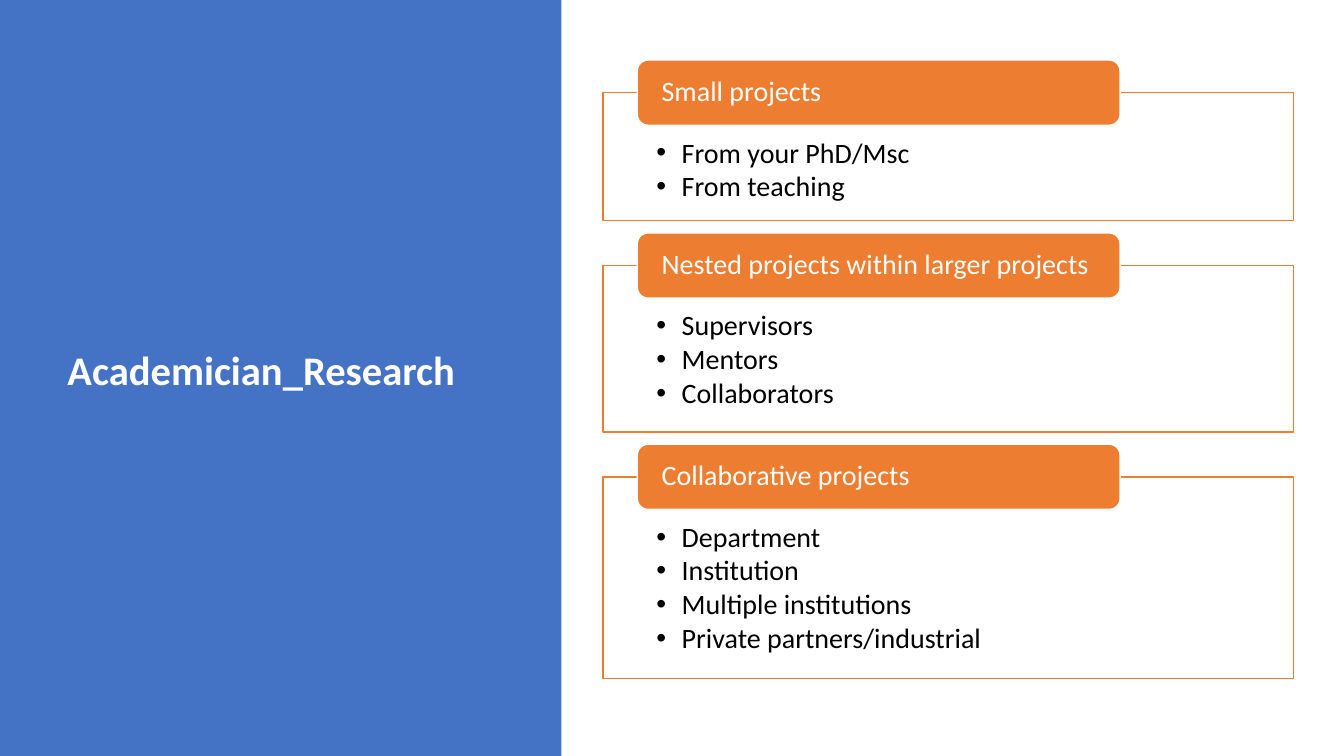
"""Build a slide with a title panel and three headed lists of research projects."""
from lxml.etree import SubElement
from pptx import Presentation
from pptx.dml.color import RGBColor
from pptx.enum.shapes import MSO_SHAPE
from pptx.enum.text import MSO_ANCHOR, MSO_AUTO_SIZE, PP_ALIGN
from pptx.oxml.ns import qn
from pptx.util import Pt

BLUE = RGBColor(0x44, 0x72, 0xC4)
ORANGE = RGBColor(0xED, 0x7D, 0x31)
WHITE = RGBColor(0xFF, 0xFF, 0xFF)
BLACK = RGBColor(0x00, 0x00, 0x00)

PROJECTS = [
    ("Small projects", 91.4, ["From your PhD/Msc", "From teaching"]),
    ("Nested projects within larger projects", 118.8,
     ["Supervisors", "Mentors", "Collaborators"]),
    ("Collaborative projects", 144,
     ["Department", "Institution", "Multiple institutions",
      "Private partners/industrial"]),
]
FIRST_TOP, GAP = 66.2, 32.1
LIST_LEFT, LIST_WIDTH = 430.6, 493.2
HEADER_LEFT, HEADER_WIDTH, HEADER_HEIGHT = 455.2, 344.9, 46.6


class ProjectSlide:
    """Hold the text style and the current slide."""

    font = {"name": "Calibri", "size": Pt(20), "bold": False}
    paragraph = {"line_spacing": 0.9, "space_before": Pt(0),
                 "alignment": PP_ALIGN.LEFT}
    frame = {"word_wrap": True, "auto_size": MSO_AUTO_SIZE.NONE,
             "vertical_anchor": MSO_ANCHOR.MIDDLE}

    def __init__(self, slide):
        """Keep the slide to be filled."""
        self.slide = slide

    def apply(self, target, values):
        """Set each attribute named in values."""
        for name, value in values.items():
            setattr(target, name, value)

    def place(self, shape, left, top, width, height):
        """Position a shape, in points."""
        self.apply(shape, {"left": Pt(left), "top": Pt(top),
                           "width": Pt(width), "height": Pt(height)})

    def add_lines(self, shape, lines, color, font={}, paragraph={}, frame={}):
        """Put lines in a shape in the shared style with the given changes."""
        text = shape.text_frame
        text.text = "\n".join(lines)
        self.apply(text, self.frame | frame)
        for line in text.paragraphs:
            self.apply(line, self.paragraph | paragraph)
            self.apply(line.runs[0].font, self.font | font)
            line.runs[0].font.color.rgb = color

    def block(self, kind, box, fill):
        """Add a filled shape without shadow or outline."""
        block = self.slide.shapes.add_shape(kind, 0, 0, 0, 0)
        self.place(block, *box)
        block.shadow.inherit = False
        block.fill.solid()
        block.fill.fore_color.rgb = fill
        block.line.fill.background()
        return block

    def panel(self, box):
        """Add the blue panel behind everything else."""
        panel = self.block(MSO_SHAPE.RECTANGLE, box, BLUE)
        self.slide.shapes._spTree.insert(2, panel._element)

    def title(self, words, box):
        """Fill the title placeholder."""
        title = self.slide.shapes.title
        self.place(title, *box)
        self.add_lines(title, [words], WHITE, {"size": Pt(29), "bold": True})

    def header(self, words, box):
        """Add an orange rounded header."""
        header = self.block(MSO_SHAPE.ROUNDED_RECTANGLE, box, ORANGE)
        header.line.color.rgb = WHITE
        header.line.width = Pt(1)
        self.add_lines(header, [words], WHITE, frame={
            "margin_left": Pt(15.1), "margin_right": Pt(15.1),
            "margin_top": 0, "margin_bottom": 0})

    def bullets(self, body, items, box):
        """Fill a body placeholder with an outlined bullet list."""
        self.place(body, *box)
        body.fill.solid()
        body.fill.fore_color.rgb = WHITE
        tint = body._element.spPr.find(qn("a:solidFill"))[0]
        SubElement(tint, qn("a:alpha"), val="90000")
        body.line.color.rgb = ORANGE
        body.line.width = Pt(1)
        self.add_lines(
            body, items, BLACK,
            paragraph={"space_after": Pt(2.5), "level": 1},
            frame={"vertical_anchor": MSO_ANCHOR.TOP,
                   "margin_left": Pt(38.3), "margin_right": Pt(38.3),
                   "margin_top": Pt(33), "margin_bottom": Pt(11.5)})
        for item in body.text_frame.paragraphs:
            properties = item._p.get_or_add_pPr()
            properties.set("marL", str(Pt(18)))
            properties.set("indent", str(Pt(-18)))
            SubElement(properties, qn("a:buFont"), typeface="Arial")
            SubElement(properties, qn("a:buChar"), char="•")


def main():
    """Create and save the presentation."""
    deck = Presentation()
    deck.slide_width, deck.slide_height = Pt(960), Pt(540)
    comparison = deck.slide_layouts.get_by_name("Comparison")
    page = ProjectSlide(deck.slides.add_slide(comparison))
    page.panel((0, 0, 401, 540))
    page.title("Academician_Research", (41, 49, 299.5, 433.5))
    _, *bodies, spare = page.slide.placeholders
    spare._element.getparent().remove(spare._element)
    top = FIRST_TOP
    for body, (heading, height, items) in zip(bodies, PROJECTS):
        page.bullets(body, items, (LIST_LEFT, top, LIST_WIDTH, height))
        page.header(heading, (HEADER_LEFT, top - HEADER_HEIGHT / 2,
                              HEADER_WIDTH, HEADER_HEIGHT))
        top += height + GAP
    deck.save("out.pptx")


if __name__ == "__main__":
    main()
